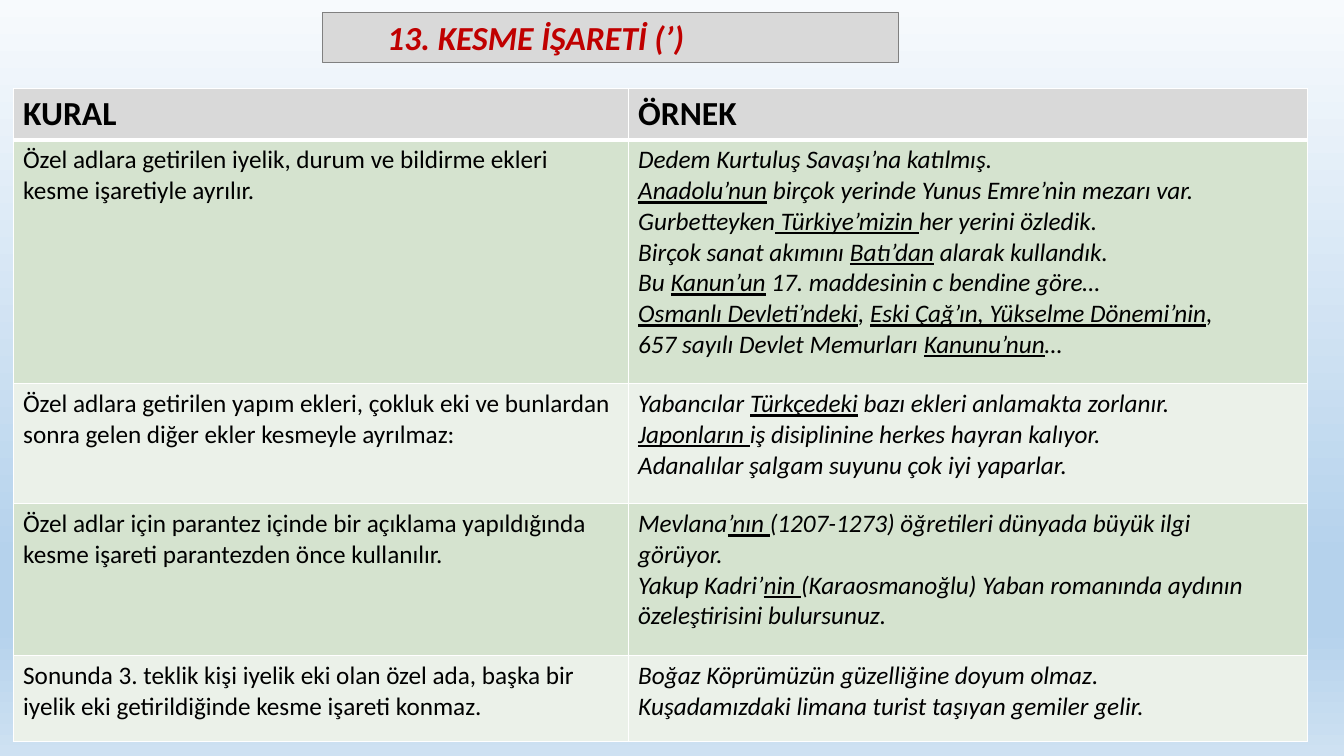
from dataclasses import dataclass
from lxml import etree
from pptx import Presentation
from pptx.dml.color import RGBColor
from pptx.enum.shapes import MSO_SHAPE
from pptx.enum.text import MSO_ANCHOR, PP_ALIGN
from pptx.oxml import parse_xml
from pptx.oxml.ns import nsdecls, qn
from pptx.util import Inches, Pt


@dataclass(frozen=True)
class Theme:
    font: str = "Calibri"
    heading: int = 24
    body: int = 18
    text: str = "000000"
    title: str = "C00000"
    grey: str = "D9D9D9"
    outline: str = "808080"
    border: str = "FFFFFF"
    bands: tuple = ("D5E3CF", "EBF1E9")
    sky: tuple = ((0, "F7FAFD"), (74, "B5D2EC"), (83, "B5D2EC"), (100, "CEE1F2"))


theme = Theme()


def add_runs(p, text, size, color=theme.text, bold=False, italic=False):
    for i, part in enumerate(text.split("_")):
        if part:
            r = p.add_run()
            r.text = part
            r.font.name = theme.font
            r.font.size = Pt(size)
            r.font.bold = bold
            r.font.italic = italic
            r.font.underline = i % 2 == 1
            r.font.color.rgb = RGBColor.from_string(color)


def style_cell(cell, color, bottom=1):
    cell.fill.solid()
    cell.fill.fore_color.rgb = RGBColor.from_string(color)
    tcPr = cell._tc.get_or_add_tcPr()
    for i, side in enumerate("LRTB"):
        ln = etree.Element(qn(f"a:ln{side}"), w=str(Pt(bottom if side == "B" else 1)))
        fill = etree.SubElement(ln, qn("a:solidFill"))
        etree.SubElement(fill, qn("a:srgbClr"), val=theme.border)
        tcPr.insert(i, ln)


prs = Presentation()
prs.slide_width = Inches(13.33)
prs.slide_height = Inches(7.5)
s = prs.slides.add_slide(prs.slide_layouts[6])

stops = "".join(
    f'<a:gs pos="{pos * 1000}"><a:srgbClr val="{color}"/></a:gs>' for pos, color in theme.sky
)
s.element.cSld.insert(0, parse_xml(
    f'<p:bg {nsdecls("p", "a")}><p:bgPr><a:gradFill rotWithShape="1">'
    f'<a:gsLst>{stops}</a:gsLst><a:lin ang="5400000" scaled="0"/>'
    "</a:gradFill><a:effectLst/></p:bgPr></p:bg>"
))

sp = s.shapes.add_shape(
    MSO_SHAPE.RECTANGLE, Inches(3.2), Inches(0.12), Inches(5.71), Inches(0.5)
)
sp.shadow.inherit = False
sp.fill.solid()
sp.fill.fore_color.rgb = RGBColor.from_string(theme.grey)
sp.line.color.rgb = RGBColor.from_string(theme.outline)
sp.line.width = Pt(0.75)
tf = sp.text_frame
tf.word_wrap = True
tf.vertical_anchor = MSO_ANCHOR.MIDDLE
tf.margin_left = Inches(0.64)
p = tf.paragraphs[0]
p.alignment = PP_ALIGN.LEFT
add_runs(p, "13. KESME İŞARETİ (’)", theme.heading, theme.title, bold=True, italic=True)

headers = ("KURAL", "ÖRNEK")
rules = [
    (
        ["Özel adlara getirilen iyelik, durum ve bildirme ekleri kesme işaretiyle ayrılır."],
        [
            "Dedem Kurtuluş Savaşı’na katılmış.",
            "_Anadolu’nun_ birçok yerinde Yunus Emre’nin mezarı var.",
            "Gurbetteyken_ Türkiye’mizin _her yerini özledik.",
            "Birçok sanat akımını _Batı’dan_ alarak kullandık.",
            "Bu _Kanun’un_ 17. maddesinin c bendine göre…",
            "_Osmanlı Devleti’ndeki_, _Eski Çağ’ın, Yükselme Dönemi’nin_,",
            "657 sayılı Devlet Memurları _Kanunu’nun_…",
        ],
    ),
    (
        [
            "Özel adlara getirilen yapım ekleri, çokluk eki ve bunlardan",
            "sonra gelen diğer ekler kesmeyle ayrılmaz:",
        ],
        [
            "Yabancılar _Türkçedeki_ bazı ekleri anlamakta zorlanır.",
            "_Japonların _iş disiplinine herkes hayran kalıyor.",
            "Adanalılar şalgam suyunu çok iyi yaparlar.",
        ],
    ),
    (
        [
            "Özel adlar için parantez içinde bir açıklama yapıldığında",
            "kesme işareti parantezden önce kullanılır.",
        ],
        [
            "Mevlana_’nın _(1207-1273) öğretileri dünyada büyük ilgi",
            "görüyor.",
            "Yakup Kadri’_nin _(Karaosmanoğlu) Yaban romanında aydının özeleştirisini bulursunuz.",
        ],
    ),
    (
        [
            "Sonunda 3. teklik kişi iyelik eki olan özel ada, başka bir",
            "iyelik eki getirildiğinde kesme işareti konmaz.",
        ],
        [
            "Boğaz Köprümüzün güzelliğine doyum olmaz.",
            "Kuşadamızdaki limana turist taşıyan gemiler gelir.",
        ],
    ),
]

table = s.shapes.add_table(
    len(rules) + 1, len(headers), Inches(0.13), Inches(0.88), Inches(12.84), Inches(6.46)
).table
table.first_row = False
table.horz_banding = False
for column, width in zip(table.columns, (6.1, 6.74)):
    column.width = Inches(width)
for row, height in zip(table.rows, (0.5, 2.42, 1.19, 1.51, 0.85)):
    row.height = Inches(height)

for col, header in enumerate(headers):
    cell = table.cell(0, col)
    style_cell(cell, theme.grey, bottom=3)
    add_runs(cell.text_frame.paragraphs[0], header, theme.heading, bold=True)

for row, rule in enumerate(rules, start=1):
    for col, lines in enumerate(rule):
        cell = table.cell(row, col)
        style_cell(cell, theme.bands[(row - 1) % 2])
        tf = cell.text_frame
        for i, line in enumerate(lines):
            p = tf.add_paragraph() if i else tf.paragraphs[0]
            add_runs(p, line, theme.body, italic=col == 1)

prs.save("out.pptx")
